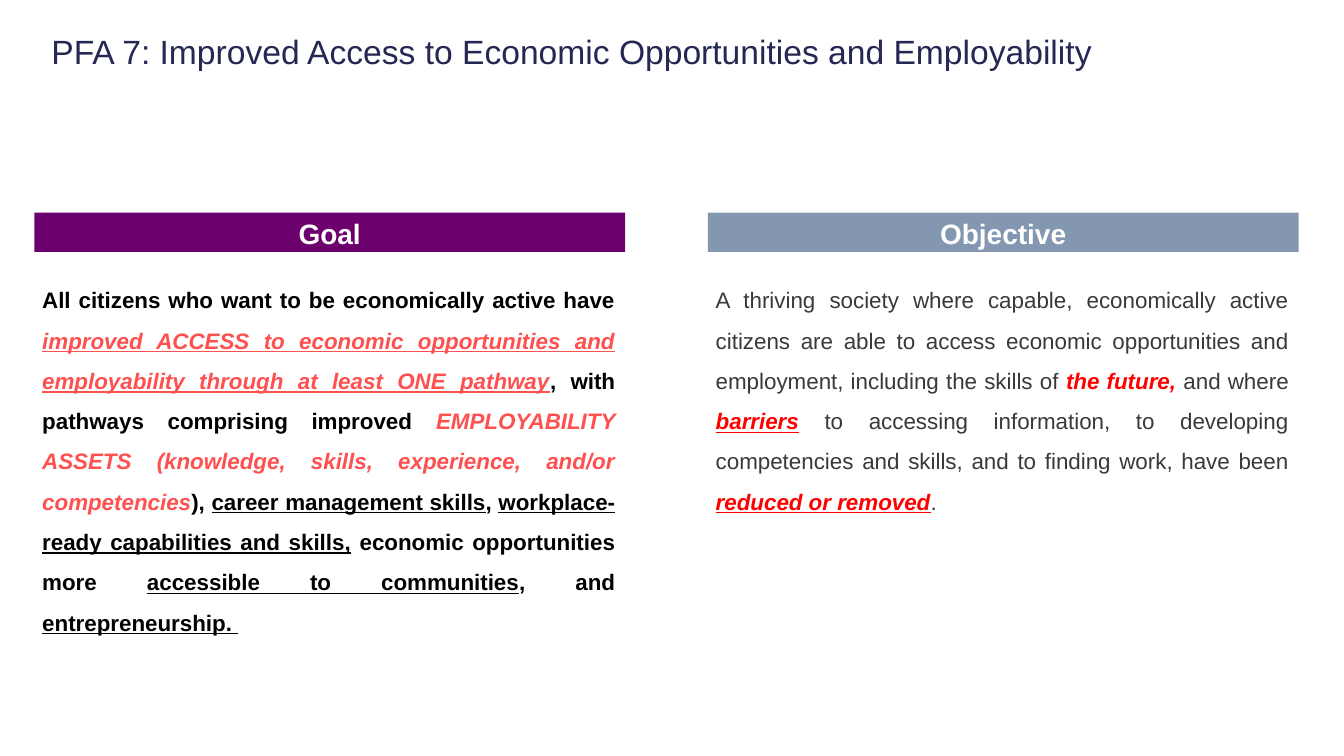
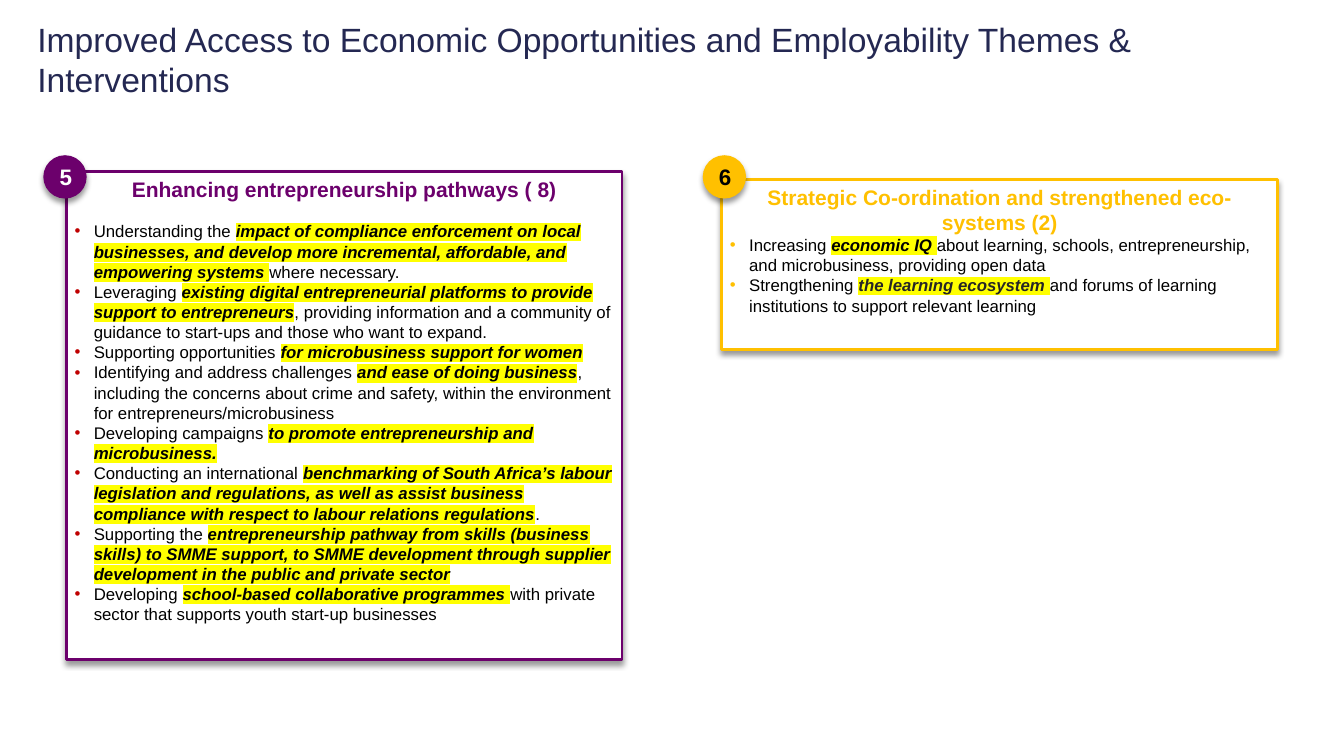
from lxml.etree import SubElement
from pptx import Presentation
from pptx.dml.color import RGBColor as RGB
from pptx.enum.shapes import MSO_SHAPE as SHAPE
from pptx.enum.text import MSO_ANCHOR as ANCHOR, PP_ALIGN as ALIGN
from pptx.oxml.ns import qn
from pptx.util import Inches, Pt

FONT = "Arial"
NAVY, PURPLE, SLATE, GOLD = "242852", "6C006C", "8397B0", "FFC000"
BLACK, WHITE, GREY, MAROON = "000000", "FFFFFF", "3B3838", "C00000"
CORAL, RED, YELLOW = "FF5050", "FF0000", "FFFF00"

# Run styles
UNDER = dict(underline=True)
ASSET = dict(color=CORAL, italic=True)
ACCESS = dict(ASSET, underline=True)
ALERT = dict(color=RED, bold=True, italic=True)
STRONG = dict(ALERT, underline=True)
HIT = dict(bold=True, italic=True, mark=YELLOW)
SOFT = dict(HIT, color="262626")

GOAL = [
    "All citizens who want to be economically active have ",
    ("improved ACCESS to economic opportunities and employability "
     "through at least ONE pathway", ACCESS),
    ", with pathways comprising improved ",
    ("EMPLOYABILITY ASSETS (knowledge, skills, experience, and/or "
     "competencies", ASSET),
    "), ", ("career management skills", UNDER),
    ", ", ("workplace-ready capabilities and skills,", UNDER),
    " economic opportunities more ", ("accessible to communities", UNDER),
    ", and ", ("entrepreneurship. ", UNDER)]

AIM = [
    "A thriving society where capable, economically active citizens are able "
    "to access economic opportunities and employment, including the skills of ",
    ("the future, ", ALERT), "and where ", ("barriers", STRONG),
    " to accessing information, to developing competencies and skills, and "
    "to finding work, have been ",
    ("reduced or removed", STRONG), "."]

PATHS = [
    ["Understanding the ",
     ("impact of compliance enforcement on local businesses, and develop more "
      "incremental, affordable, and empowering systems ", HIT),
     "where necessary."],
    ["Leveraging ",
     ("existing digital entrepreneurial platforms to provide support to "
      "entrepreneurs", HIT),
     ", providing information and a community of guidance to start-ups and "
     "those who want to expand."],
    ["Supporting opportunities ",
     ("for microbusiness support for women", HIT)],
    ["Identifying and address challenges ", ("and ease of doing business", HIT),
     ", including the concerns about crime and safety, within the environment "
     "for entrepreneurs/microbusiness"],
    ["Developing campaigns ",
     ("to promote entrepreneurship and microbusiness.", HIT)],
    ["Conducting an international ",
     ("benchmarking of South Africa’s labour legislation and regulations, as "
      "well as assist business compliance with respect to labour relations "
      "regulations", HIT), "."],
    ["Supporting the ",
     ("entrepreneurship pathway from skills (business skills) to SMME support, "
      "to SMME development through supplier development in the public and "
      "private sector", HIT)],
    ["Developing ", ("school-based collaborative programmes ", HIT),
     "with private sector that supports youth start-up businesses"]]

LINKS = [
    ["Increasing ", ("economic IQ ", HIT),
     "about learning, schools, entrepreneurship, and microbusiness, providing "
     "open data"],
    ["Strengthening ", ("the learning ecosystem ", SOFT),
     "and forums of learning institutions to support relevant learning"]]


def paint(target, color):
    """Give a fill or a line a solid colour."""
    target.solid()
    target.fore_color.rgb = RGB.from_string(color)


def write(para, parts, size, color, bold=False, align=ALIGN.LEFT):
    """Fill a paragraph; a part is plain text or a (text, style) pair."""
    para.alignment = align
    font = para.font
    font.name, font.size, font.bold = FONT, Pt(size), bold
    font.color.rgb = RGB.from_string(color)
    for part in parts:
        text, style = (part, {}) if isinstance(part, str) else part
        run = para.add_run()
        run.text = text
        for key, value in style.items():
            if key not in ("color", "mark"):
                setattr(run.font, key, value)
        run.font.color.rgb = RGB.from_string(style.get("color", color))
        if "mark" in style:
            mark = SubElement(run.font._element, qn("a:highlight"))
            SubElement(mark, qn("a:srgbClr"), val=style["mark"])


def indent(para, left, first=0):
    props = para._p.get_or_add_pPr()
    props.set("marL", str(Inches(left)))
    props.set("indent", str(Inches(first)))
    return props


def bullet(para, color):
    props = indent(para, 0.19, -0.19)
    tint = SubElement(props, qn("a:buClr"))
    SubElement(tint, qn("a:srgbClr"), val=color)
    SubElement(props, qn("a:buFont"), typeface=FONT)
    SubElement(props, qn("a:buChar"), char="•")


def shade(shape):
    """Drop a soft shadow straight down."""
    glow = SubElement(shape._element.spPr.find(qn("a:effectLst")),
                      qn("a:outerShdw"), blurRad=str(Pt(4)), dist=str(Pt(3)),
                      dir="5400000", algn="t", rotWithShape="0")
    tone = SubElement(glow, qn("a:srgbClr"), val=BLACK)
    SubElement(tone, qn("a:alpha"), val="40000")


def block(slide, kind, area, fill, edge=None):
    shape = slide.shapes.add_shape(kind, *map(Inches, area))
    shape.shadow.inherit = False
    paint(shape.fill, fill)
    if edge:
        paint(shape.line.fill, edge)
        shape.line.width = Pt(2)
    else:
        shape.line.fill.background()
    shape.text_frame.word_wrap = True
    return shape


def title(slide, text, left, top):
    box = slide.shapes.add_textbox(*map(Inches, (left, top, 12.54, 0.61)))
    frame = box.text_frame
    frame.word_wrap = False
    frame.vertical_anchor = ANCHOR.MIDDLE
    frame.margin_left = frame.margin_right = Inches(0.08)
    frame.margin_top = frame.margin_bottom = Inches(0.08)
    write(frame.paragraphs[0], [text], 24, NAVY)


def column(slide, left, head, fill, parts, color, bold):
    """Header band with justified text below."""
    band = block(slide, SHAPE.RECTANGLE, (left, 2.11, 5.86, 0.39), fill)
    para = band.text_frame.paragraphs[0]
    para.line_spacing = 1.07
    write(para, [head], 20, WHITE, True, ALIGN.CENTER)
    area = (left - 0.12, 2.66, 5.98, 3.69)
    frame = slide.shapes.add_textbox(*map(Inches, area)).text_frame
    frame.word_wrap = True
    para = frame.paragraphs[0]
    indent(para, 0.1)
    para.line_spacing = 1.5
    write(para, parts, 16, color, bold, ALIGN.JUSTIFY)


def card(slide, area, head, color, dot, items, gap=0):
    """Framed box with a heading and bullets."""
    box = block(slide, SHAPE.RECTANGLE, area, WHITE, color)
    shade(box)
    frame = box.text_frame
    frame.vertical_anchor = ANCHOR.TOP
    frame.margin_left = frame.margin_right = Inches(0.08)
    para = frame.paragraphs[0]
    para.space_after = Pt(gap)
    write(para, [head], 15, color, True, ALIGN.CENTER)
    for parts in items:
        para = frame.add_paragraph()
        bullet(para, dot)
        write(para, parts, 12, BLACK)


def badge(slide, left, text, fill, color):
    disc = block(slide, SHAPE.OVAL, (left, 1.54, 0.43, 0.43), fill)
    shade(disc)
    write(disc.text_frame.paragraphs[0], [text], 16, color, True, ALIGN.CENTER)


def main():
    deck = Presentation()
    deck.slide_width, deck.slide_height = Inches(13.33), Inches(7.5)
    blank = deck.slide_layouts[6]

    # Goal and objective
    slide = deck.slides.add_slide(blank)
    title(slide, "PFA 7: Improved Access to Economic Opportunities and "
          "Employability", 0.43, 0.2)
    column(slide, 0.34, "Goal", PURPLE, GOAL, BLACK, True)
    column(slide, 7.02, "Objective", SLATE, AIM, GREY, False)

    # Themes and interventions
    slide = deck.slides.add_slide(blank)
    card(slide, (7.16, 1.78, 5.51, 1.69),
         "Strategic Co-ordination and strengthened eco-systems (2)",
         GOLD, GOLD, LINKS)
    badge(slide, 6.97, "6", GOLD, BLACK)
    card(slide, (0.66, 1.7, 5.51, 4.84),
         "Enhancing entrepreneurship pathways ( 8)",
         PURPLE, MAROON, PATHS, gap=14)
    badge(slide, 0.43, "5", PURPLE, WHITE)
    title(slide, "Improved Access to Economic Opportunities and Employability "
          "Themes & Interventions", 0.29, 0.28)

    deck.save("out.pptx")


if __name__ == "__main__":
    main()
